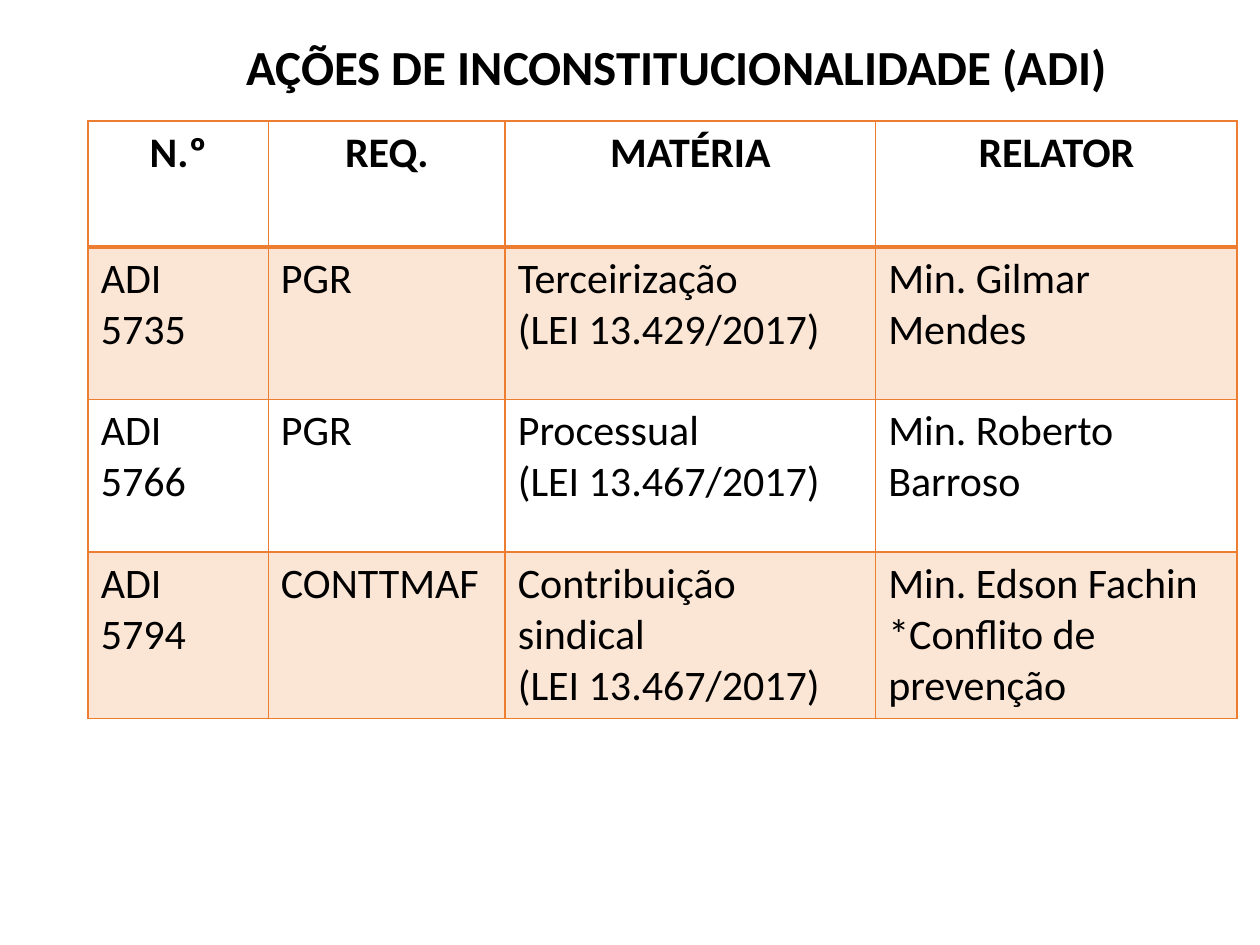
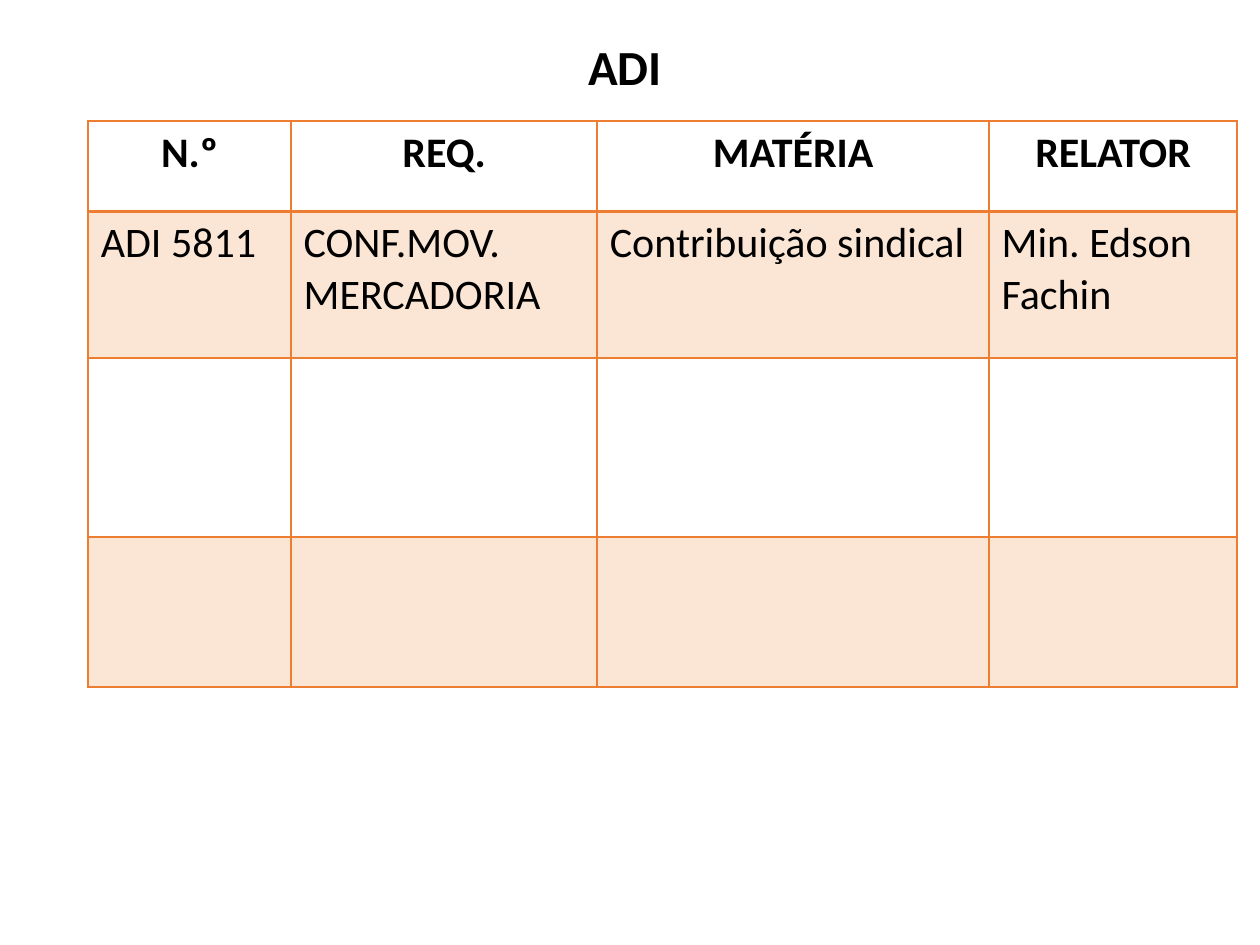
from dataclasses import dataclass

from lxml.etree import SubElement
from pptx import Presentation
from pptx.dml.color import RGBColor
from pptx.enum.text import MSO_AUTO_SIZE as AutoSize, PP_ALIGN as Align
from pptx.oxml import parse_xml
from pptx.oxml.ns import nsdecls, qn
from pptx.util import Inches, Pt


@dataclass(frozen=True)
class Theme:
    font: str = "Calibri"
    ink: str = "000000"
    accent: str = "ED7D31"
    band_opacity: int = 20
    title_size: int = 28
    cell_size: int = 24
    rule: int = 1
    header_rule: int = 2


THEME = Theme()
SLIDE_WIDTH, SLIDE_HEIGHT = Inches(10), Inches(7.5)
TABLE_LEFT, TABLE_TOP, TABLE_WIDTH = 7, 12.8, 91.2
TITLE_TOP, TITLE_HEIGHT = 3.2, 7.6
HEADINGS = ("N.º", "REQ.", "MATÉRIA", "RELATOR")


def across(percent):
    return round(SLIDE_WIDTH * percent / 100)


def down(percent):
    return round(SLIDE_HEIGHT * percent / 100)


def add_run(paragraph, text, size, bold):
    run = paragraph.add_run()
    run.text = text
    run.font.name = THEME.font
    run.font.size = Pt(size)
    run.font.bold = bold
    run.font.color.rgb = RGBColor.from_string(THEME.ink)


def add_title(slide, text, left, width):
    shape = slide.shapes.add_textbox(
        across(left), down(TITLE_TOP), across(width), down(TITLE_HEIGHT))
    shape.text_frame.word_wrap = False
    shape.text_frame.auto_size = AutoSize.SHAPE_TO_FIT_TEXT
    add_run(shape.text_frame.paragraphs[0], text, THEME.title_size, True)


def fill_cell(cell, banded):
    if not banded:
        cell.fill.background()
        return
    cell.fill.solid()
    cell.fill.fore_color.rgb = RGBColor.from_string(THEME.accent)
    color = cell._tc.tcPr.find(qn("a:solidFill")).find(qn("a:srgbClr"))
    SubElement(color, qn("a:alpha")).set("val", str(THEME.band_opacity * 1000))


def draw_borders(cell, row):
    widths = {"lnL": THEME.rule, "lnR": THEME.rule,
              "lnT": THEME.header_rule if row == 1 else THEME.rule,
              "lnB": THEME.header_rule if row == 0 else THEME.rule}
    properties = cell._tc.get_or_add_tcPr()
    for position, (side, width) in enumerate(widths.items()):
        properties.insert(position, parse_xml(
            f'<a:{side} {nsdecls("a")} w="{Pt(width)}"><a:solidFill>'
            f'<a:srgbClr val="{THEME.accent}"/></a:solidFill></a:{side}>'))


def write_cell(cell, text, is_header):
    for index, line in enumerate(text.split("\n") if text else []):
        frame = cell.text_frame
        paragraph = frame.add_paragraph() if index else frame.paragraphs[0]
        paragraph.alignment = Align.CENTER if is_header else Align.LEFT
        add_run(paragraph, line, THEME.cell_size, is_header)


def share_out(tracks, weights, total, attribute):
    for track, weight in zip(tracks, weights):
        setattr(track, attribute, round(total * weight / sum(weights)))


def add_actions_table(slide, actions, column_weights, row_weights, height):
    rows = [HEADINGS, *actions]
    table = slide.shapes.add_table(
        len(rows), len(HEADINGS), across(TABLE_LEFT), down(TABLE_TOP),
        across(TABLE_WIDTH), down(height)).table
    table.horz_banding = False
    share_out(table.columns, column_weights, across(TABLE_WIDTH), "width")
    share_out(table.rows, row_weights, down(height), "height")
    for row, texts in enumerate(rows):
        for column, text in enumerate(texts):
            cell = table.cell(row, column)
            write_cell(cell, text, row == 0)
            fill_cell(cell, row % 2 == 1)
            draw_borders(cell, row)


def add_slide(presentation, title, title_left, title_width, **table):
    slide = presentation.slides.add_slide(presentation.slide_layouts[6])
    add_actions_table(slide, **table)
    add_title(slide, title, title_left, title_width)


def main():
    presentation = Presentation()
    presentation.slide_width, presentation.slide_height = SLIDE_WIDTH, SLIDE_HEIGHT
    add_slide(
        presentation, "AÇÕES DE INCONSTITUCIONALIDADE (ADI)", 18.6, 72,
        actions=[
            ("ADI 5735", "PGR", "Terceirização\n(LEI 13.429/2017)",
             "Min. Gilmar Mendes"),
            ("ADI 5766", "PGR", "Processual\n(LEI 13.467/2017)",
             "Min. Roberto Barroso"),
            ("ADI 5794", "CONTTMAF", "Contribuição sindical\n(LEI 13.467/2017)",
             "Min. Edson Fachin\n*Conflito de prevenção"),
        ],
        column_weights=(1.43, 1.88, 2.94, 2.87),
        row_weights=(1, 1.21, 1.21, 1.25), height=62.3)
    add_slide(
        presentation, "ADI", 45.7, 8.8,
        actions=[
            ("ADI 5811", "CONF.MOV.\nMERCADORIA", "Contribuição sindical",
             "Min. Edson Fachin"),
            ("",) * len(HEADINGS),
            ("",) * len(HEADINGS),
        ],
        column_weights=(1.61, 2.43, 3.11, 1.97),
        row_weights=(0.72, 1.16, 1.42, 1.19), height=59.9)
    presentation.save("out.pptx")


if __name__ == "__main__":
    main()
